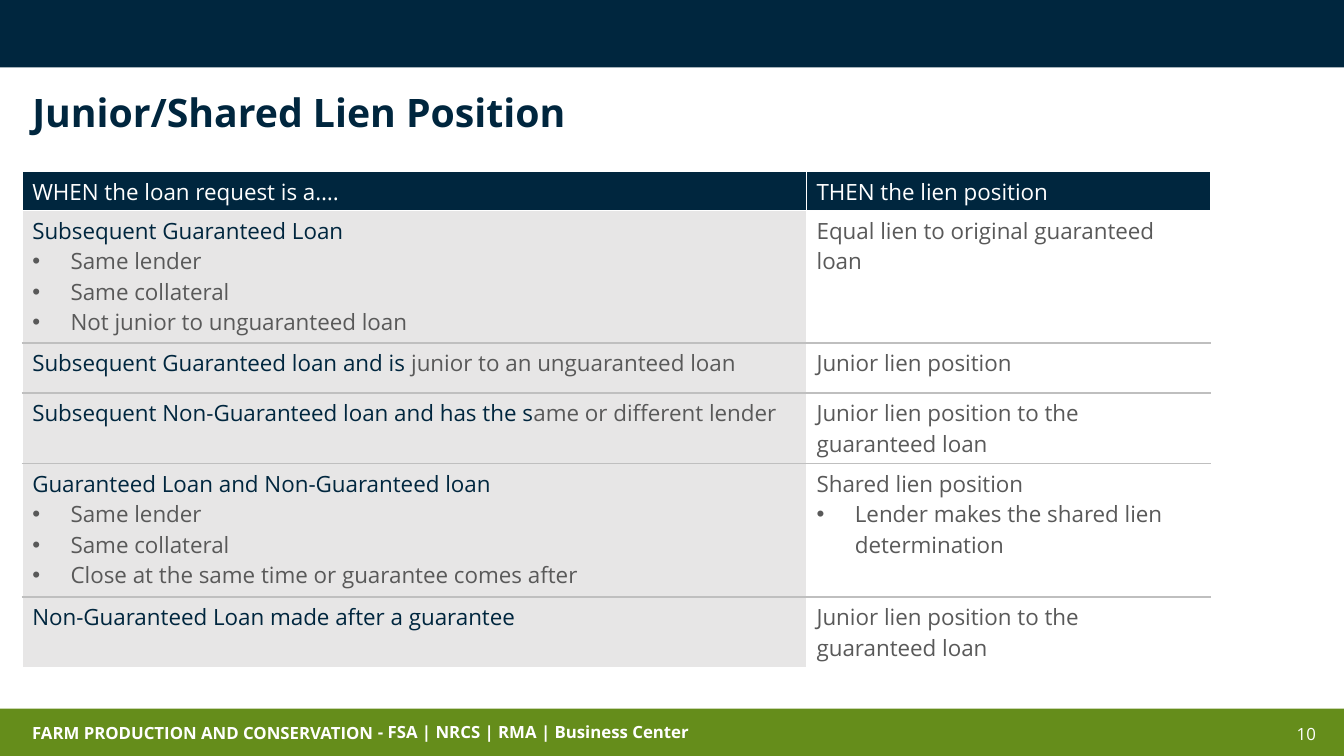
from pptx import Presentation
from pptx.dml.color import RGBColor
from pptx.enum.shapes import MSO_SHAPE as Shape
from pptx.enum.text import MSO_ANCHOR as Anchor, PP_ALIGN as Align
from pptx.oxml.ns import qn
from pptx.util import Inches, Pt
from lxml.etree import SubElement as Sub, Element

NAVY = RGBColor(0x00, 0x26, 0x3E)
GREEN = RGBColor(0x65, 0x8D, 0x1B)
WHITE = RGBColor(0xFF, 0xFF, 0xFF)
PALE = RGBColor(0xE7, 0xE6, 0xE6)
RULE = RGBColor(0xBF, 0xBF, 0xBF)
GREY = RGBColor(0x59, 0x59, 0x59)
FONT = "Open Sans"
WIDE, HIGH = Inches(13.33), Inches(7.5)

# Column widths and row heights, in percent of the slide
COLS = [58.36, 30.08]
ROWS = [5.2, 17.5, 6.6, 9.35, 17.65, 9.33]

# Each cell: navy lead, grey rest of the line, bullets
HEADS = ["WHEN the loan request is a….", "THEN the lien position"]
BODY = [
    [("Subsequent Guaranteed Loan", "",
      ["Same lender", "Same collateral", "Not junior to unguaranteed loan"]),
     ("", "Equal lien to original guaranteed loan", [])],
    [("Subsequent Guaranteed loan and is ",
      "junior to an unguaranteed loan", []),
     ("", "Junior lien position", [])],
    [("Subsequent Non-Guaranteed loan and has the s",
      "ame or different lender", []),
     ("", "Junior lien position to the guaranteed loan", [])],
    [("Guaranteed Loan and Non-Guaranteed loan", "",
      ["Same lender", "Same collateral",
       "Close at the same time or guarantee comes after"]),
     ("", "Shared lien position",
      ["Lender makes the shared lien determination"])],
    [("Non-Guaranteed Loan made after a guarantee", "", []),
     ("", "Junior lien position to the guaranteed loan", [])],
]


def across(share):
    return int(WIDE * share / 100)


def down(share):
    return int(HIGH * share / 100)


def area(left, top, width, height):
    return across(left), down(top), across(width), down(height)


def style(font, size, color, bold=False):
    font.name, font.size, font.bold = FONT, Pt(size), bold
    font.color.rgb = color


def add_band(slide, top, height, color):
    band = slide.shapes.add_shape(Shape.RECTANGLE, *area(0, top, 100, height))
    band.shadow.inherit = False
    band.fill.solid()
    band.fill.fore_color.rgb = color
    band.line.fill.background()


def add_label(slide, text, box, bold=True, align=Align.LEFT):
    frame = slide.shapes.add_textbox(*area(*box)).text_frame
    frame.word_wrap = True
    frame.vertical_anchor = Anchor.MIDDLE
    frame.text = text
    line = frame.paragraphs[0]
    line.alignment = align
    style(line.runs[0].font, 12, WHITE, bold)


def set_title(slide, text):
    title = slide.shapes.title
    title.left, title.top, title.width, title.height = area(
        1.65, 12.13, 95.87, 5.73)
    frame = title.text_frame
    frame.text = text
    frame.word_wrap = True
    frame.vertical_anchor = Anchor.TOP
    frame.margin_top = Inches(0.02)
    line = frame.paragraphs[0]
    line.alignment = Align.LEFT
    line.line_spacing = 0.9
    style(line.runs[0].font, 28, NAVY, True)


def add_bullet(para):
    props = para._p.get_or_add_pPr()
    indent = Inches(0.38)
    props.set("marL", str(indent))
    props.set("indent", str(-indent))
    Sub(props, qn("a:buFont"), typeface="Arial")
    Sub(props, qn("a:buChar"), char="•")


def set_edges(cell, top, bottom):
    props = cell._tc.get_or_add_tcPr()
    edges = [("L", WHITE), ("R", WHITE), ("T", top), ("B", bottom)]
    for spot, (side, color) in enumerate(edges):
        width = Pt(1.5 if color == RULE else 1)
        line = Element(qn("a:ln" + side), w=str(width))
        fill = Sub(line, qn("a:solidFill"))
        Sub(fill, qn("a:srgbClr"), val=str(color))
        props.insert(spot, line)


def paint(cell, fill, top, bottom):
    cell.fill.solid()
    cell.fill.fore_color.rgb = fill
    set_edges(cell, top, bottom)


def fill_cell(cell, lead, rest, points):
    frame = cell.text_frame
    first = frame.paragraphs[0]
    for text, color in [(lead, NAVY), (rest, GREY)]:
        if text:
            run = first.add_run()
            run.text = text
            style(run.font, 16, color)
    for point in points:
        para = frame.add_paragraph()
        para.text = point
        add_bullet(para)
        style(para.runs[0].font, 16, GREY)


def add_grid(slide):
    box = area(1.65, 22.67, sum(COLS), sum(ROWS))
    table = slide.shapes.add_table(len(ROWS), len(COLS), *box).table
    for col, share in zip(table.columns, COLS):
        col.width = across(share)
    for row, share in zip(table.rows, ROWS):
        row.height = down(share)
    # Header row
    for col, text in enumerate(HEADS):
        cell = table.cell(0, col)
        cell.text_frame.text = text
        style(cell.text_frame.paragraphs[0].runs[0].font, 16, WHITE)
        paint(cell, NAVY, WHITE, WHITE)
    # Body rows, ruled between one another
    for row, cells in enumerate(BODY, 1):
        top = WHITE if row == 1 else RULE
        bottom = WHITE if row == len(BODY) else RULE
        for col, parts in enumerate(cells):
            cell = table.cell(row, col)
            fill_cell(cell, *parts)
            paint(cell, WHITE if col else PALE, top, bottom)


def main():
    deck = Presentation()
    deck.slide_width, deck.slide_height = WIDE, HIGH
    slide = deck.slides.add_slide(deck.slide_layouts[5])
    # Bands and footer
    add_band(slide, 93.73, 6.27, GREEN)
    add_band(slide, 0, 8.93, NAVY)
    add_label(slide, "FARM PRODUCTION AND CONSERVATION",
              (1.65, 94.93, 37.2, 4))
    add_label(slide, "- FSA | NRCS | RMA | Business Center",
              (27.38, 94.8, 25, 4))
    add_label(slide, "10", (95.27, 94.4, 3.38, 5.33), False, Align.RIGHT)
    # Title and table
    set_title(slide, "Junior/Shared Lien Position")
    add_grid(slide)
    deck.save("out.pptx")


if __name__ == "__main__":
    main()
